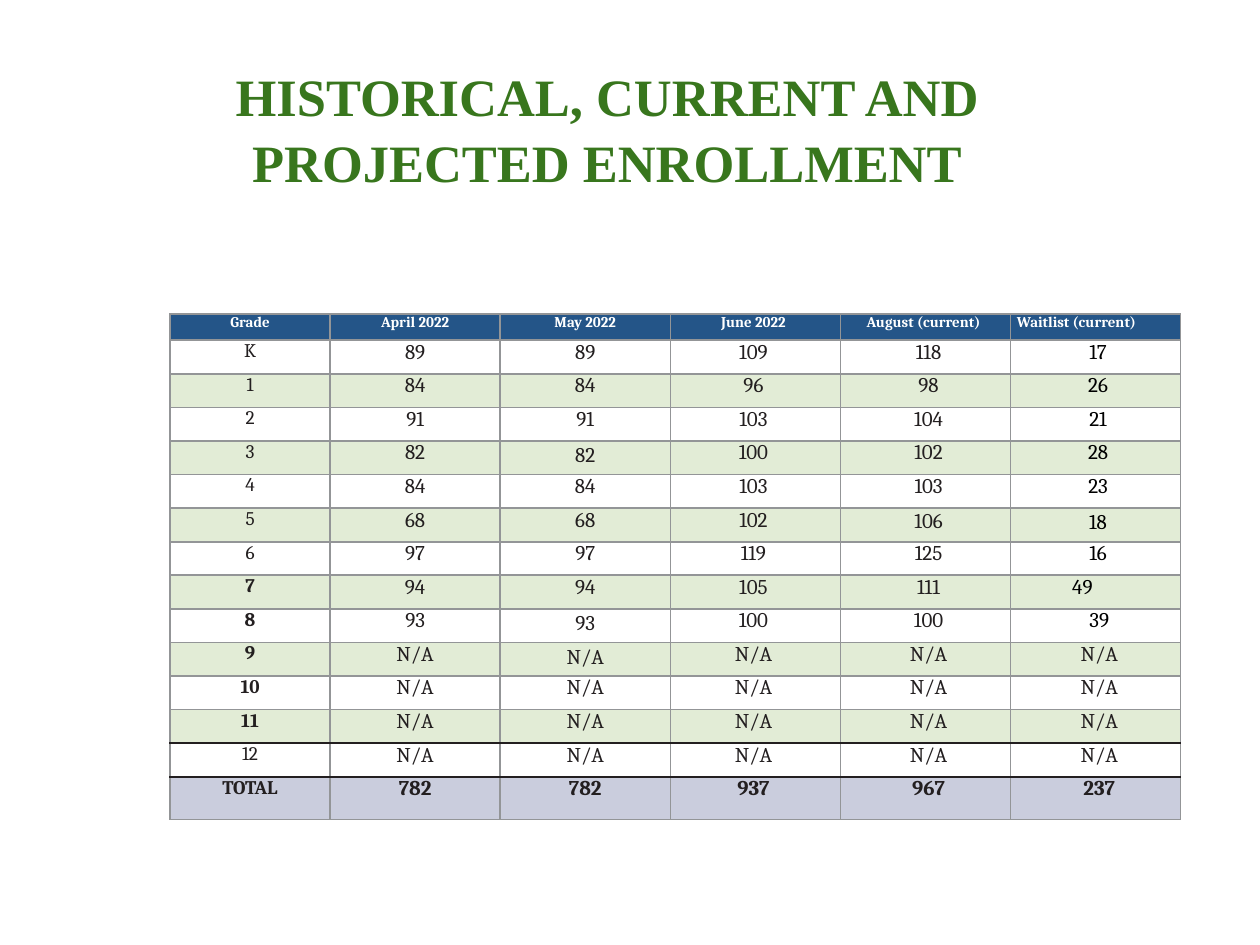
from lxml.etree import SubElement
from pptx import Presentation
from pptx.dml.color import RGBColor
from pptx.enum.text import MSO_ANCHOR, PP_ALIGN
from pptx.oxml.ns import qn
from pptx.util import Inches, Pt

GREEN, BLUE, MINT, LILAC = "38761D", "245588", "E2ECD6", "CACDDD"
INK, GRAY, WHITE, BLACK = "231F20", "939597", "FFFFFF", "000000"

HEADS = ["Grade", "April 2022", "May 2022", "June 2022",
         "August (current)", "Waitlist (current)"]
ROWS = [HEADS] + [line.split() for line in (
    "K 89 89 109 118 17",
    "1 84 84 96 98 26",
    "2 91 91 103 104 21",
    "3 82 82 100 102 28",
    "4 84 84 103 103 23",
    "5 68 68 102 106 18",
    "6 97 97 119 125 16",
    "7 94 94 105 111 49",
    "8 93 93 100 100 39",
    "9 N/A N/A N/A N/A N/A",
    "10 N/A N/A N/A N/A N/A",
    "11 N/A N/A N/A N/A N/A",
    "12 N/A N/A N/A N/A N/A",
    "TOTAL 782 782 937 967 237",
)]
LAST = len(ROWS) - 1
WIDTHS = [1.27] + [1.35] * 5
HEAD_H, TOTAL_H, TABLE_H = 0.21, 0.34, 4.02
BODY_H = (TABLE_H - HEAD_H - TOTAL_H) / (LAST - 1)

# Cells that depart from the rule, by (row, column)
SPACING = {(4, 2): 1.12, (6, 4): 1.08, (6, 5): 1.12, (9, 2): 1.12, (10, 2): 1.13}
LEFT = {(0, 5): 0.05, (8, 5): 0.49}


def color(code):
    return RGBColor.from_string(code)


def indent(row, col):
    """Left and right paragraph margins of a cell, in inches."""
    if (row, col) in LEFT:
        return LEFT[row, col], 0
    if row == 0:
        return 0, 0.03 if col > 2 else 0
    waits = 0.04 if row < 8 else 0.06
    return [(0, 0), (0, 0), (0, 0), (0, 0.03), (0.05, 0), (waits, 0)][col]


def look(row, col):
    """Size, colour and weight of a cell's text."""
    if row == 0:
        return 8.5, WHITE, True
    bold = row == LAST or (col == 0 and 8 <= row <= 12)
    ink = BLACK if col == 5 and row <= 9 else INK
    return 11 if col == 0 else 12, ink, bold


def shade(row):
    if row in (0, LAST):
        return BLUE if row == 0 else LILAC
    return None if row % 2 else MINT


def rule(edge):
    """Colour and width of the line above row number edge."""
    return INK if edge in (LAST - 1, LAST) else GRAY, 1.5 if 6 <= edge <= 8 else 1


class Deck:
    title_font, table_font = "Times New Roman", "Cambria"

    def __init__(self):
        self.show = Presentation()
        self.show.slide_width, self.show.slide_height = Inches(10), Inches(7.5)
        self.slide = self.show.slides.add_slide(self.show.slide_layouts[6])

    def style(self, para, font, size, ink, bold):
        for run in para.runs:
            run.font.name, run.font.size, run.font.bold = font, Pt(size), bold
            run.font.color.rgb = color(ink)

    def title(self, text, left, top, width, height):
        box = self.slide.shapes.add_textbox(*map(Inches, (left, top, width, height)))
        frame = box.text_frame
        frame.word_wrap = True
        frame.vertical_anchor = MSO_ANCHOR.MIDDLE
        frame.text = text
        para = frame.paragraphs[0]
        para.alignment = PP_ALIGN.CENTER
        para.line_spacing = 1.04
        self.style(para, self.title_font, 30, GREEN, True)

    def table(self, left, top):
        area = map(Inches, (left, top, sum(WIDTHS), TABLE_H))
        table = self.slide.shapes.add_table(len(ROWS), len(HEADS), *area).table
        table.first_row = table.horz_banding = False
        for column, width in zip(table.columns, WIDTHS):
            column.width = Inches(width)
        heights = [HEAD_H] + [BODY_H] * (LAST - 1) + [TOTAL_H]
        for row, height in enumerate(heights):
            table.rows[row].height = Inches(height)
            for col, text in enumerate(ROWS[row]):
                self.cell(table.cell(row, col), text, row, col)

    def cell(self, cell, text, row, col):
        cell.margin_left = cell.margin_right = 0
        cell.margin_top = cell.margin_bottom = 0
        self.border(cell, row)
        fill = shade(row)
        if fill:
            cell.fill.solid()
            cell.fill.fore_color.rgb = color(fill)
        else:
            cell.fill.background()
        para = cell.text_frame.paragraphs[0]
        para.text = text
        para.alignment = PP_ALIGN.LEFT if (row, col) in LEFT else PP_ALIGN.CENTER
        if (row, col) in SPACING:
            para.line_spacing = SPACING[row, col]
        props = para._p.get_or_add_pPr()
        for name, size in zip(("marL", "marR"), indent(row, col)):
            props.set(name, str(Inches(size)))
        self.style(para, self.table_font, *look(row, col))

    def border(self, cell, row):
        props = cell._tc.get_or_add_tcPr()
        sides = {"lnL": (GRAY, 1), "lnR": (GRAY, 1),
                 "lnT": rule(row), "lnB": rule(row + 1)}
        for side, (ink, width) in sides.items():
            line = SubElement(props, qn(f"a:{side}"), w=str(Pt(width)))
            fill = SubElement(line, qn("a:solidFill"))
            SubElement(fill, qn("a:srgbClr"), val=ink)


def main():
    deck = Deck()
    deck.title("HISTORICAL, CURRENT AND PROJECTED ENROLLMENT", 0.56, 0.43, 8.52, 1.16)
    deck.table(1.35, 2.49)
    deck.show.save("out.pptx")


if __name__ == "__main__":
    main()
